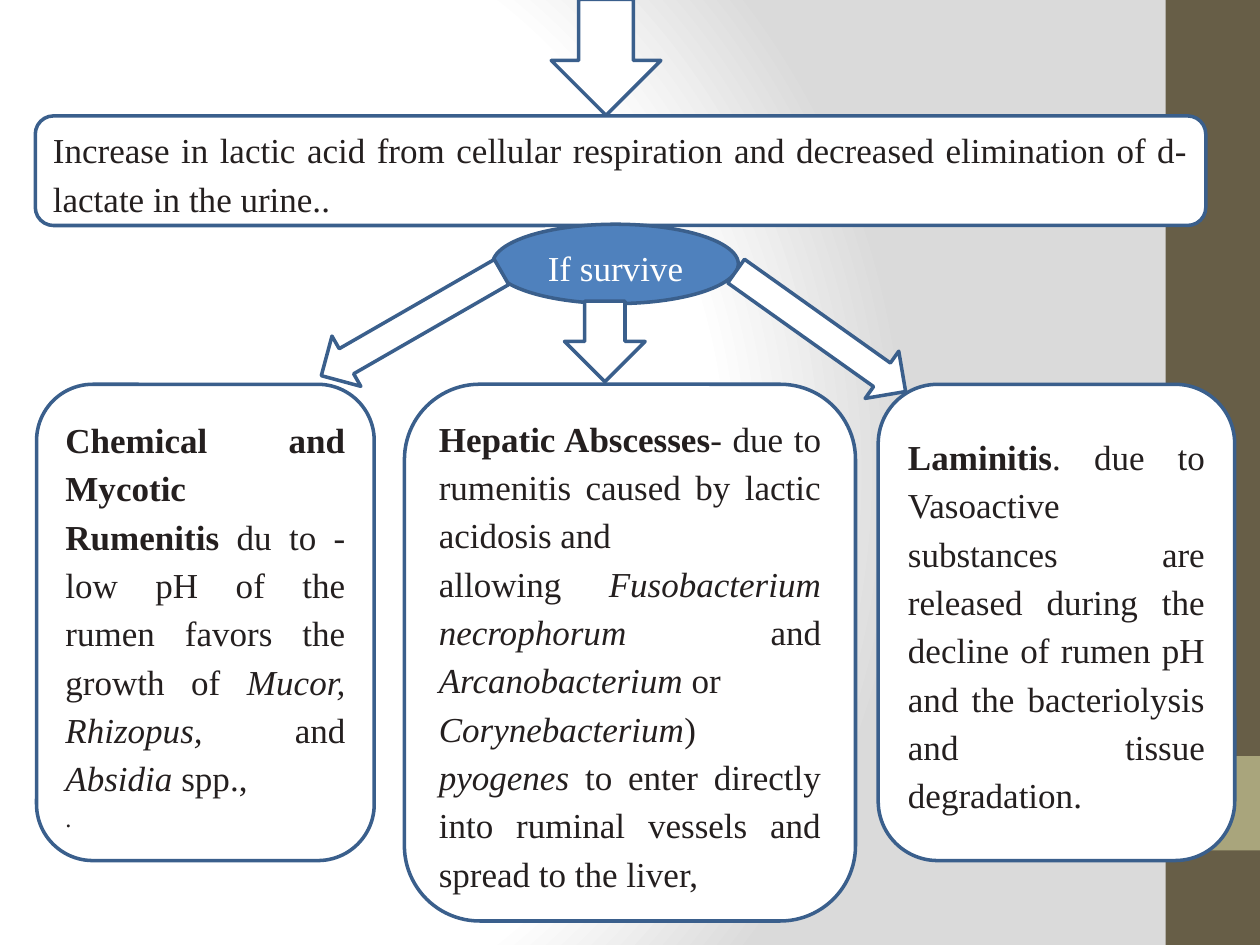
from pptx import Presentation
from pptx.dml.color import RGBColor
from pptx.enum.shapes import MSO_SHAPE
from pptx.enum.text import MSO_ANCHOR, PP_ALIGN
from pptx.oxml import parse_xml
from pptx.oxml.ns import nsdecls
from pptx.util import Inches, Pt

FONT = "Times New Roman"
WHITE, OUTLINE, INK, BLUE = "FFFFFF", "3A5F8C", "241F1F", "4F81BD"
GRADIENT_STOPS = [(0, WHITE), (75, WHITE), (100, "DADADA")]

# Each paragraph is a list of (text, style) runs: b = bold, i = italic
TOP_TEXT = [[("Increase in lactic acid from cellular respiration and decreased "
              "elimination of d-lactate in the urine..", "")]]
RUMENITIS = [
    [("Chemical and Mycotic Rumenitis ", "b"),
     ("du to - low pH of the rumen favors the growth of ", ""),
     ("Mucor, Rhizopus, ", "i"), ("and ", ""), ("Absidia ", "i"), ("spp.,", "")],
    [(".", "")],
]
ABSCESSES = [
    [("Hepatic Abscesses", "b"),
     ("- due to rumenitis caused by lactic acidosis and", "")],
    [("allowing ", ""), ("Fusobacterium necrophorum ", "i"), ("and ", ""),
     ("Arcanobacterium ", "i"), ("or", "")],
    [("Corynebacterium", "i"), (") ", ""), ("pyogenes ", "i"),
     ("to enter directly into ruminal vessels and spread to the liver,", "")],
]
LAMINITIS = [
    [("Laminitis", "b"),
     (". due to Vasoactive substances are released during the decline of rumen "
      "pH and the bacteriolysis and tissue degradation.", "")],
]


def color(value):
    return RGBColor.from_string(value)


def set_background(slide):
    stops = "".join(
        f'<a:gs pos="{position * 1000}"><a:srgbClr val="{value}"/></a:gs>'
        for position, value in GRADIENT_STOPS)
    background = parse_xml(
        f'<p:bg {nsdecls("p", "a")}><p:bgPr><a:gradFill rotWithShape="1">'
        f'<a:gsLst>{stops}</a:gsLst><a:path path="circle">'
        '<a:fillToRect l="20000" t="50000" r="100000" b="50000"/></a:path>'
        '</a:gradFill><a:effectLst/></p:bgPr></p:bg>')
    slide.element.cSld.insert(0, background)


def add_shape(slide, kind, box, fill=WHITE, outline=OUTLINE):
    shape = slide.shapes.add_shape(kind, *(Inches(value) for value in box))
    shape.shadow.inherit = False
    shape.fill.solid()
    shape.fill.fore_color.rgb = color(fill)
    if outline:
        shape.line.color.rgb = color(outline)
        shape.line.width = Pt(2)
    else:
        shape.line.fill.background()
    return shape


def add_arrow(slide, box, rotation):
    add_shape(slide, MSO_SHAPE.RIGHT_ARROW, box).rotation = rotation


def write_text(shape, paragraphs, align=PP_ALIGN.JUSTIFY, font_color=INK):
    frame = shape.text_frame
    frame.word_wrap = True
    frame.vertical_anchor = MSO_ANCHOR.MIDDLE
    for index, runs in enumerate(paragraphs):
        paragraph = frame.add_paragraph() if index else frame.paragraphs[0]
        paragraph.alignment = align
        paragraph.line_spacing = 1.15
        for text, style in runs:
            run = paragraph.add_run()
            run.text = text
            run.font.name = FONT
            run.font.size = Pt(14 if text == "." else 20)
            run.font.bold = style == "b"
            run.font.italic = style == "i"
            run.font.color.rgb = color(font_color)


def add_text_box(slide, box, paragraphs):
    write_text(add_shape(slide, MSO_SHAPE.ROUNDED_RECTANGLE, box), paragraphs)


def main():
    presentation = Presentation()
    presentation.slide_width = Inches(10)
    presentation.slide_height = Inches(7.5)
    slide = presentation.slides.add_slide(presentation.slide_layouts[6])

    # Background and side band
    set_background(slide)
    add_shape(slide, MSO_SHAPE.RECTANGLE, (9.25, 0, 0.75, 7.5), "675E47", None)
    add_shape(slide, MSO_SHAPE.RECTANGLE, (9.25, 6, 0.75, 0.75), "A9A57C", None)

    # Incoming arrow and cause
    add_arrow(slide, (4.35, 0.02, 0.92, 0.87), 90)
    add_text_box(slide, (0.28, 0.92, 9.29, 0.87), TOP_TEXT)

    # Condition
    condition = add_shape(slide, MSO_SHAPE.OVAL, (3.91, 1.78, 1.95, 0.63), BLUE)
    write_text(condition, [[("If survive", "")]], PP_ALIGN.CENTER, WHITE)
    condition.text_frame.paragraphs[0].space_after = Pt(10)

    # Outcomes and the arrows leading to them
    add_arrow(slide, (2.44, 2.34, 1.65, 0.46), 150.1)
    add_text_box(slide, (0.29, 3.05, 2.68, 3.78), RUMENITIS)
    add_text_box(slide, (3.21, 3.05, 3.58, 4.26), ABSCESSES)
    add_text_box(slide, (6.97, 3.05, 2.83, 3.78), LAMINITIS)
    add_arrow(slide, (4.48, 2.39, 0.64, 0.64), 90)
    add_arrow(slide, (5.69, 2.4, 1.65, 0.46), 35.4)

    presentation.save("out.pptx")


if __name__ == "__main__":
    main()
